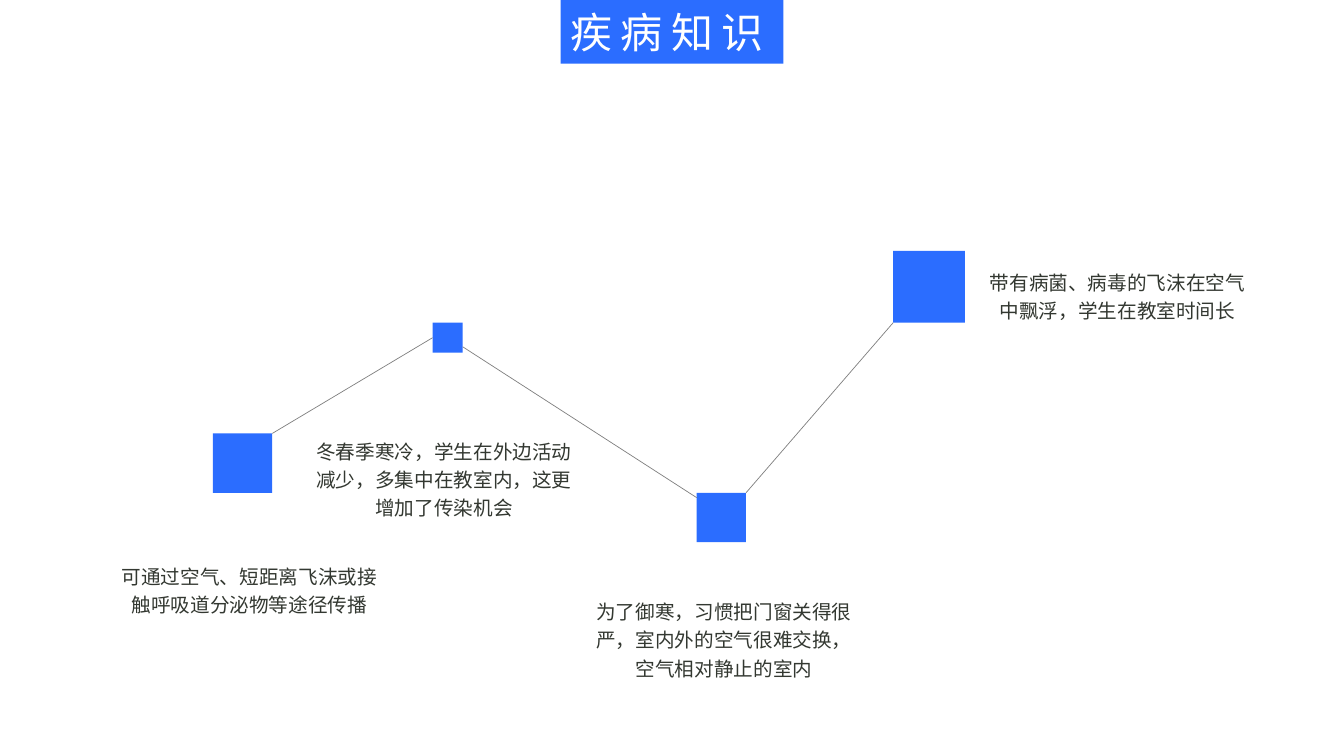
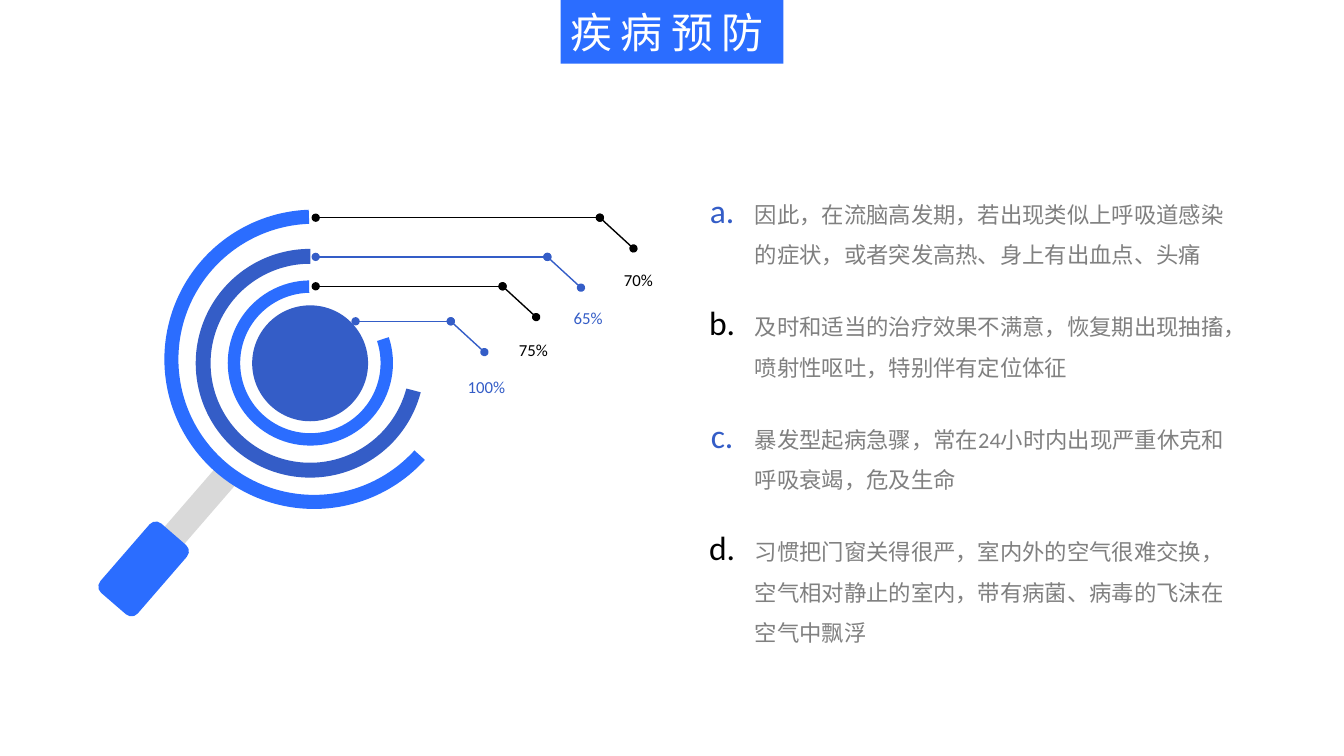
import lxml.etree
import pptx
import pptx.dml.color
import pptx.enum.shapes
import pptx.enum.text
import pptx.oxml.ns
import pptx.util

Pt = pptx.util.Pt
SHAPE = pptx.enum.shapes.MSO_SHAPE
ALIGN = pptx.enum.text.PP_ALIGN
ANCHOR = pptx.enum.text.MSO_ANCHOR
qn = pptx.oxml.ns.qn

FONT = "Calibri"
COLORS = {
    "blue": "2B6DFF",
    "navy": "345DC7",
    "black": "000000",
    "white": "FFFFFF",
    "dark": "333831",
    "gray": "808080",
    "light": "D9D9D9",
}


def rgb(color):
    return pptx.dml.color.RGBColor.from_string(COLORS[color])


def add_shape(s, kind, box, color, rotation=0):
    sp = s.shapes.add_shape(kind, *map(Pt, box))
    sp.shadow.inherit = False
    sp.fill.solid()
    sp.fill.fore_color.rgb = rgb(color)
    sp.line.fill.background()
    sp.rotation = rotation
    return sp


def add_centered(s, kind, center, size, color, rotation=0):
    (cx, cy), (w, h) = center, size
    return add_shape(s, kind, (cx - w / 2, cy - h / 2, w, h), color, rotation)


def add_line(s, start, end, color, width, dots=False):
    """Draw a straight line, with a dot on each end if asked."""
    line = s.shapes.add_connector(
        pptx.enum.shapes.MSO_CONNECTOR.STRAIGHT, *map(Pt, (*start, *end)))
    line.line.color.rgb = rgb(color)
    line.line.width = Pt(width)
    if dots:
        ln = line.line._get_or_add_ln()
        for tag in ("a:headEnd", "a:tailEnd"):
            lxml.etree.SubElement(ln, qn(tag), type="oval")
    lxml.etree.SubElement(line._element.spPr, qn("a:effectLst"))
    return line


def write(sp, text, size, color, align, spacing=1.0):
    p = sp.text_frame.paragraphs[0]
    p.text = text
    p.alignment = align
    p.line_spacing = spacing
    font = p.runs[0].font
    font.name = FONT
    font.size = Pt(size)
    font.color.rgb = rgb(color)
    return p.runs[0]


def add_text(s, box, text, size, color, align=ALIGN.LEFT, spacing=1.0,
             anchor=ANCHOR.TOP, wrap=True, margin=None):
    sp = s.shapes.add_textbox(*map(Pt, box))
    tf = sp.text_frame
    tf.word_wrap = wrap
    tf.vertical_anchor = anchor
    if margin is not None:
        tf.margin_left = tf.margin_right = Pt(margin)
        tf.margin_top = tf.margin_bottom = Pt(margin)
    write(sp, text, size, color, align, spacing)


def add_slide(prs, title):
    s = prs.slides.add_slide(prs.slide_layouts[6])
    width, height = 159, 45.5
    left = (prs.slide_width.pt - width) / 2
    sp = add_shape(s, SHAPE.RECTANGLE, (left, 0, width, height), "blue")
    sp.text_frame.word_wrap = False
    sp.text_frame.vertical_anchor = ANCHOR.MIDDLE
    r = write(sp, title, 30, "white", ALIGN.JUSTIFY)
    r.font._element.set("spc", "600")
    return s


def add_timeline(s, left, top):
    """Place four linked squares and their captions from the given corner."""
    nodes = [  # square x, y, size; caption x, y; caption
        (73.5, 130.3, 42.5, 0, 217.5, "可通过空气、短距离飞沫或接触呼吸道分泌物等途径传播"),
        (230.5, 51.2, 21.5, 139, 128, "冬春季寒冷，学生在外边活动减少，多集中在教室内，这更增加了传染机会"),
        (419.2, 172.7, 35.2, 339, 242.5, "为了御寒，习惯把门窗关得很严，室内外的空气很难交换，空气相对静止的室内"),
        (559.5, 0, 51.2, 620, 7, "带有病菌、病毒的飞沫在空气中飘浮，学生在教室时间长"),
    ]
    squares = []
    for x, y, size, text_x, text_y, caption in nodes:
        squares.append(add_shape(
            s, SHAPE.RECTANGLE, (left + x, top + y, size, size), "blue"))
        add_text(s, (left + text_x, top + text_y, 199.5, 44), caption, 14,
                 "dark", ALIGN.CENTER, 1.2)

    def point(i, across, down):
        sq = squares[i]
        return (sq.left.pt + across * sq.width.pt,
                sq.top.pt + down * sq.height.pt)

    first = add_line(s, point(0, 1, 0), point(1, 0, 0.5), "gray", 0.5)
    first.end_connect(squares[1], 1)
    add_line(s, point(1, 1, 0.8), point(2, 0, 0.1), "gray", 0.5)
    add_line(s, point(2, 1, 0), point(3, 0, 1), "gray", 0.5)


def add_magnifier(s, cx, cy):
    """Draw a magnifying glass of open rings around the given centre."""
    tilt = 40.9
    add_centered(s, SHAPE.RECTANGLE, (cx - 83.3, cy + 107.3), (18.7, 82.8),
                 "light", tilt)
    add_centered(s, SHAPE.ROUNDED_RECTANGLE, (cx - 118.9, cy + 146.9),
                 (35.3, 65.5), "blue", tilt)
    rings = [  # centre offset, diameter, start, end, thickness, colour
        (2.8, 213.8, 214.33, 133.78, 0.047, "blue"),
        (0, 163.4, 197.83, 135.07, 0.065, "navy"),
        (0.2, 118, 178.06, 134.45, 0.075, "blue"),
    ]
    for shift, size, start, end, thickness, color in rings:
        ring = add_centered(s, SHAPE.BLOCK_ARC, (cx + shift, cy - shift),
                            (size, size), color, 45)
        for i, value in enumerate((start, end, thickness)):
            ring.adjustments[i] = value
    add_centered(s, SHAPE.OVAL, (cx, cy), (82.8, 82.8), "navy")


def add_callouts(s, cx, cy):
    """Lead lines from the rings around the given centre to percentages."""
    callouts = [  # start x, elbow x, y, label centre x, label top
        (4, 207, -104, 234.5, -68.7, "70%", "black"),
        (4, 169.5, -76, 198.6, -41.5, "65%", "navy"),
        (4, 137.5, -55, 159.5, -19, "75%", "black"),
        (32.5, 100.5, -30, 126, 7.8, "100%", "navy"),
    ]
    for start, elbow, y, label_x, label_y, label, color in callouts:
        corner = (cx + elbow, cy + y)
        end = (corner[0] + 24, corner[1] + 22)
        add_line(s, end, corner, color, 1, dots=True)
        add_line(s, corner, (cx + start, cy + y), color, 1, dots=True)
        add_text(s, (cx + label_x - 15, cy + label_y, 30, 16.5), label, 12,
                 color, ALIGN.CENTER, 1.2, ANCHOR.BOTTOM, False, 0)


def add_lettered_list(s, left, top):
    items = [
        "因此，在流脑高发期，若出现类似上呼吸道感染的症状，或者突发高热、身上有出血点、头痛",
        "及时和适当的治疗效果不满意，恢复期出现抽搐，喷射性呕吐，特别伴有定位体征",
        "暴发型起病急骤，常在24小时内出现严重休克和呼吸衰竭，危及生命",
        "习惯把门窗关得很严，室内外的空气很难交换，空气相对静止的室内，带有病菌、病毒的飞沫在空气中飘浮",
    ]
    for i, (letter, item) in enumerate(zip("abcd", items)):
        y = top + i * 80.4
        add_text(s, (left + 40.3, y, 360, 63), item, 16, "gray", spacing=1.5)
        add_text(s, (left, y + 4.5, 48, 30), letter + ".", 24,
                 ("navy", "black")[i % 2], ALIGN.CENTER, anchor=ANCHOR.MIDDLE)


def main():
    prs = pptx.Presentation()
    prs.slide_width, prs.slide_height = Pt(960), Pt(540)

    s = add_slide(prs, "疾病知识")
    add_timeline(s, 78.5, 179.3)

    s = add_slide(prs, "疾病预防")
    add_magnifier(s, 221.5, 259.5)
    add_callouts(s, 221.5, 259.5)
    add_lettered_list(s, 491.8, 130.4)

    prs.save("out.pptx")


if __name__ == "__main__":
    main()
